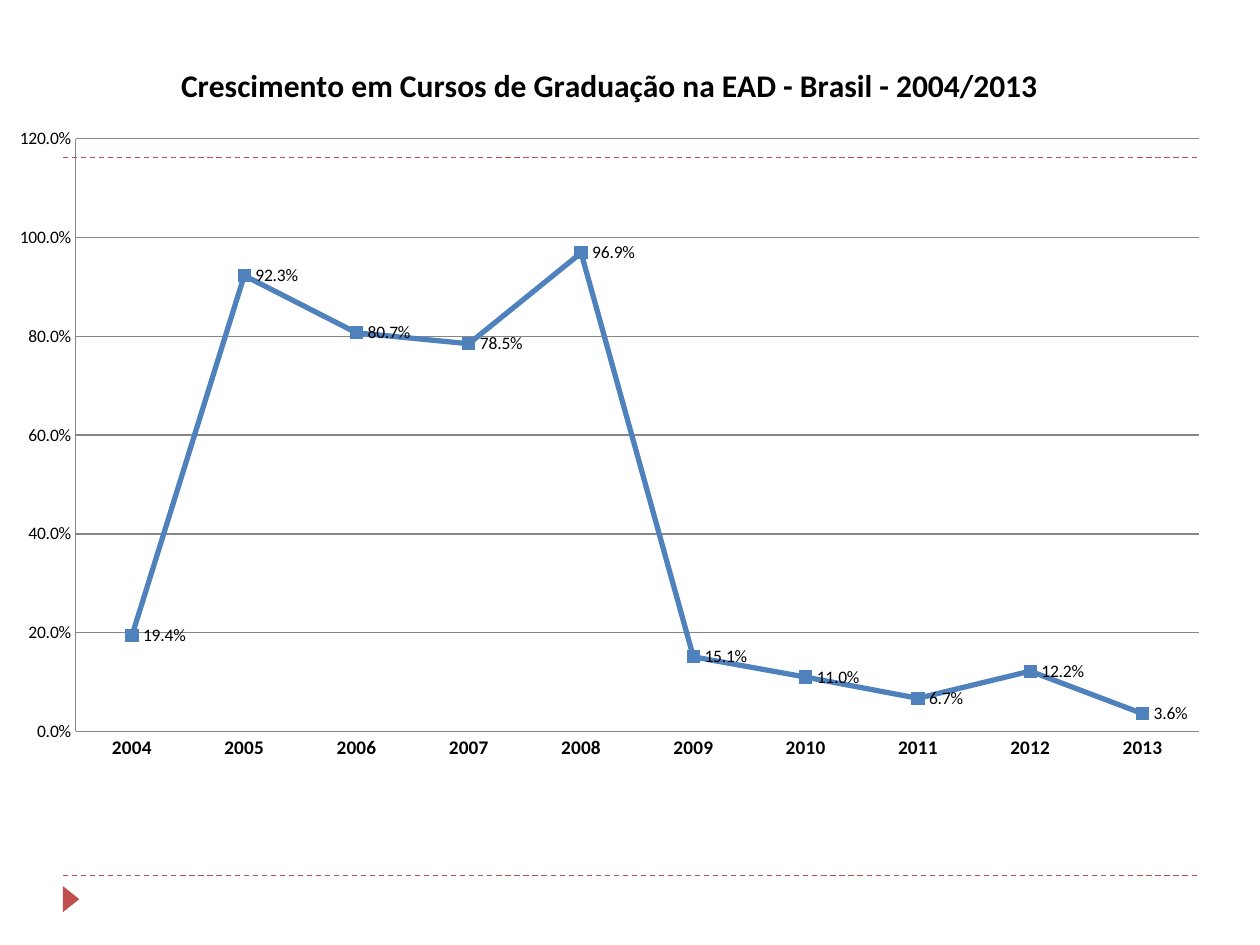
from lxml import etree
from pptx import Presentation
from pptx.chart.data import CategoryChartData
from pptx.dml.color import RGBColor
from pptx.enum.chart import XL_CHART_TYPE, XL_LABEL_POSITION, XL_MARKER_STYLE, XL_TICK_MARK
from pptx.enum.dml import MSO_LINE
from pptx.enum.shapes import MSO_CONNECTOR, MSO_SHAPE
from pptx.oxml import parse_xml
from pptx.oxml.ns import nsdecls, qn
from pptx.util import Pt

LINE_MARKERS = XL_CHART_TYPE.LINE_MARKERS
RIGHT = XL_LABEL_POSITION.RIGHT
SQUARE = XL_MARKER_STYLE.SQUARE
NO_TICK = XL_TICK_MARK.NONE
DASH = MSO_LINE.DASH
STRAIGHT = MSO_CONNECTOR.STRAIGHT
TRIANGLE = MSO_SHAPE.ISOSCELES_TRIANGLE

COLORS = {"accent": "C0504D", "series": "4F81BD", "text": "000000", "grid": "868686"}
FONT = "Calibri"
TITLE = "Crescimento em Cursos de Graduação na EAD - Brasil - 2004/2013"
YEARS = [str(year) for year in range(2004, 2014)]
GROWTH = [0.194, 0.923, 0.807, 0.785, 0.969, 0.151, 0.110, 0.067, 0.122, 0.036]
PLOT_AREA = {"x": 0.065, "y": 0.138, "w": 0.915, "h": 0.8}  # shares of the chart box


def color(name):
    return RGBColor.from_string(COLORS[name])


def style_font(font, size, bold=False):
    for key, value in {"name": FONT, "size": Pt(size), "bold": bold}.items():
        setattr(font, key, value)
    font.color.rgb = color("text")


def style_line(line, name, width):
    line.color.rgb = color(name)
    line.width = Pt(width)


def fix_plot_area(chart):
    """Pin the inner plot area to the shares in PLOT_AREA."""
    plot_area = chart.plots[0]._element.getparent()
    for old in plot_area.findall(qn("c:layout")):
        plot_area.remove(old)
    modes = '<c:layoutTarget val="inner"/><c:xMode val="edge"/><c:yMode val="edge"/>'
    shares = "".join(f'<c:{key} val="{share}"/>' for key, share in PLOT_AREA.items())
    plot_area.insert(0, parse_xml(
        f'<c:layout {nsdecls("c")}><c:manualLayout>{modes}{shares}</c:manualLayout></c:layout>'))


def add_frame(page, left, top, width, height):
    """Two dashed rules with a triangle marker below the lower one."""
    for y in (top, top + height):
        rule = page.shapes.add_connector(STRAIGHT, Pt(left), Pt(y), Pt(left + width), Pt(y))
        style_line(rule.line, "accent", 0.75)
        rule.line.dash_style = DASH
        etree.SubElement(rule._element.spPr, qn("a:effectLst"))
    marker = page.shapes.add_shape(
        TRIANGLE, Pt(left - 2.9), Pt(top + height + 8.7), Pt(15), Pt(9.4))
    marker.rotation = 90
    marker.shadow.inherit = False
    marker.fill.solid()
    marker.fill.fore_color.rgb = color("accent")
    marker.line.fill.background()


def add_growth_chart(page, left, top, width, height):
    chart_data = CategoryChartData(number_format="0.0%")
    chart_data.categories = YEARS
    chart_data.add_series("Series 1", GROWTH)
    chart = page.shapes.add_chart(
        LINE_MARKERS, Pt(left), Pt(top), Pt(width), Pt(height), chart_data).chart
    style_font(chart.font, 10)
    chart.has_legend = False
    chart.has_title = True
    chart.chart_title.include_in_layout = False
    title = chart.chart_title.text_frame
    title.text = TITLE
    style_font(title.paragraphs[0].runs[0].font, 18, True)
    fix_plot_area(chart)

    for axis, size, bold in ((chart.category_axis, 11, True), (chart.value_axis, 10, False)):
        axis.major_tick_mark = axis.minor_tick_mark = NO_TICK
        style_font(axis.tick_labels.font, size, bold)
        style_line(axis.format.line, "grid", 0.75)
    values = chart.value_axis
    for key, value in {"minimum_scale": 0, "maximum_scale": 1.2, "major_unit": 0.2,
                       "has_major_gridlines": True}.items():
        setattr(values, key, value)
    style_line(values.major_gridlines.format.line, "grid", 0.75)
    values.tick_labels.number_format = "0.0%"
    values.tick_labels.number_format_is_linked = False

    plot = chart.plots[0]
    plot.vary_by_categories = False
    series = plot.series[0]
    series.smooth = False
    style_line(series.format.line, "series", 3)
    series.marker.style = SQUARE
    series.marker.size = 7
    series.marker.format.fill.solid()
    series.marker.format.fill.fore_color.rgb = color("series")
    style_line(series.marker.format.line, "series", 0.75)
    labels = series.data_labels
    for key, value in {"show_value": True, "position": RIGHT, "number_format": "0.0%",
                       "number_format_is_linked": False}.items():
        setattr(labels, key, value)
    style_font(labels.font, 10)


def main():
    deck = Presentation()
    deck.slide_width, deck.slide_height = Pt(720), Pt(540)
    page = deck.slides.add_slide(deck.slide_layouts[6])
    add_frame(page, 36, 90, 648, 410.4)
    add_growth_chart(page, -2.2, 20.9, 701.3, 423.4)
    deck.save("out.pptx")


if __name__ == "__main__":
    main()
